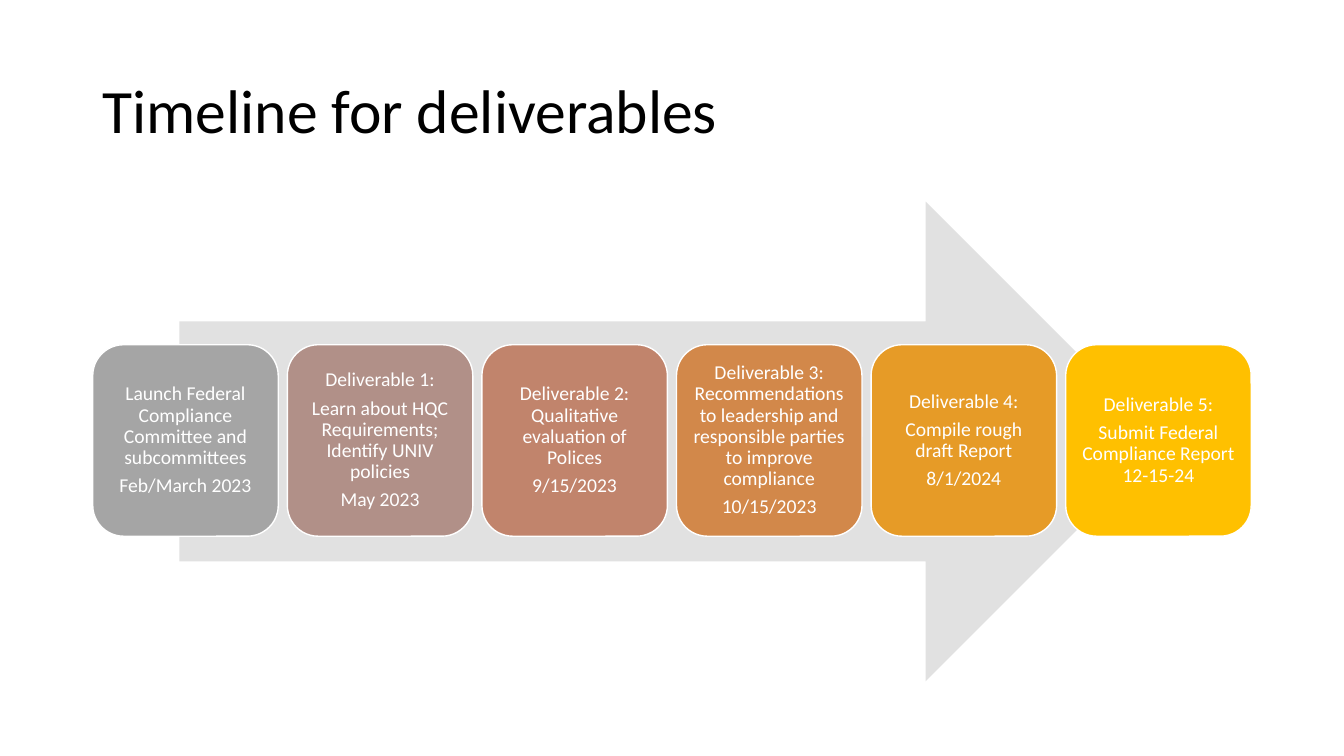
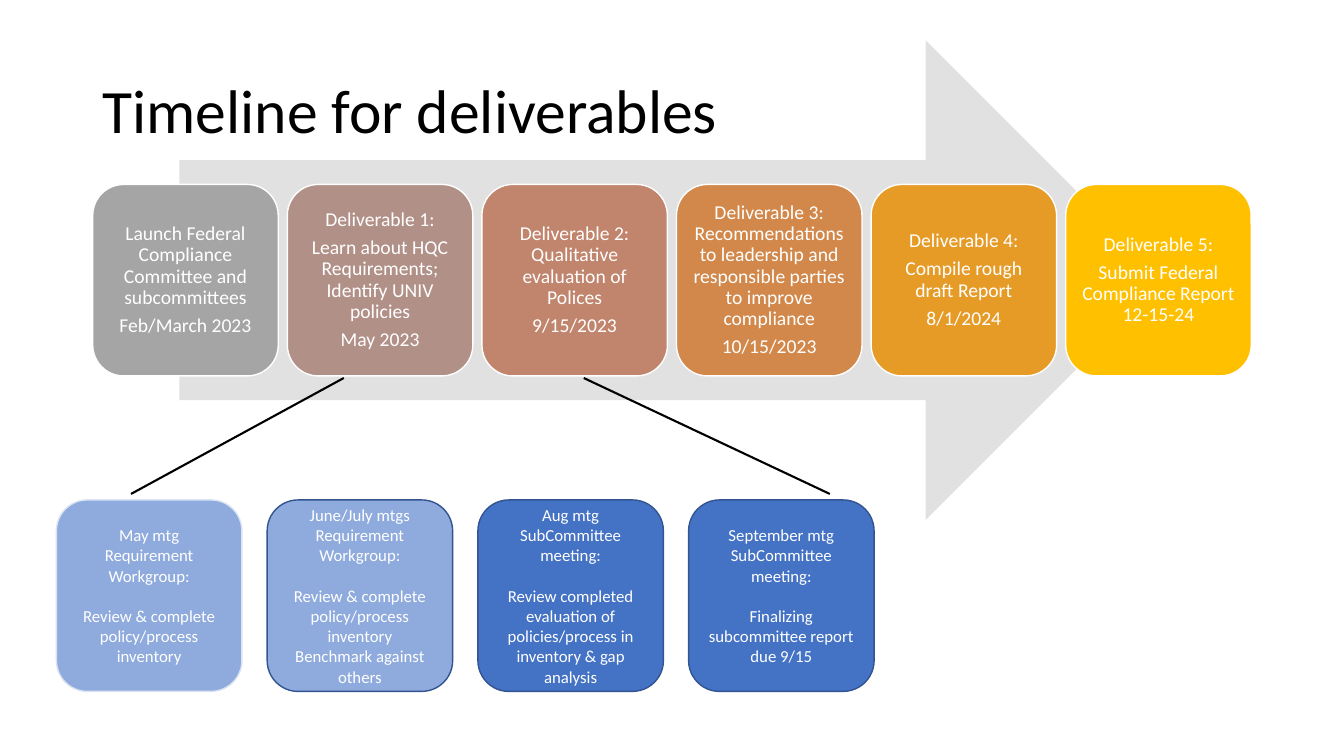
from lxml import etree
from pptx import Presentation
from pptx import util as u
from pptx.dml.color import RGBColor
from pptx.enum import shapes, text
from pptx.oxml.ns import qn

FONT = "Calibri"
BLACK = RGBColor(0x00, 0x00, 0x00)
WHITE = RGBColor(0xFF, 0xFF, 0xFF)
ARROW_GRAY = RGBColor(0xE1, 0xE1, 0xE1)
LIGHT_BLUE = RGBColor(0x8F, 0xAA, 0xDC)
PALE_BLUE = RGBColor(0xDA, 0xE3, 0xF3)
BLUE = RGBColor(0x44, 0x72, 0xC4)
DARK_BLUE = RGBColor(0x32, 0x54, 0x91)

BOX_WIDTH, BOX_HEIGHT = 1.84, 1.9
STEP_LEFT, STEP_PITCH = 0.92, 1.93
MEETING_LEFT, MEETING_TOP, MEETING_PITCH = 0.56, 4.96, 2.09

STEPS = [
    (RGBColor(0xA5, 0xA5, 0xA5),
     ["Launch Federal Compliance Committee and subcommittees", "Feb/March 2023"]),
    (RGBColor(0xB1, 0x90, 0x88),
     ["Deliverable 1:", "Learn about HQC Requirements; Identify UNIV policies", "May 2023"]),
    (RGBColor(0xC1, 0x84, 0x6C),
     ["Deliverable 2: Qualitative evaluation of Polices", "9/15/2023"]),
    (RGBColor(0xD2, 0x88, 0x4A),
     ["Deliverable 3: Recommendations to leadership and responsible parties "
      "to improve compliance", "10/15/2023"]),
    (RGBColor(0xE6, 0x9B, 0x27),
     ["Deliverable 4:", "Compile rough draft Report", "8/1/2024"]),
    (RGBColor(0xFF, 0xC0, 0x00),
     ["Deliverable 5:", "Submit Federal Compliance Report 12-15-24"]),
]

MEETINGS = [
    (LIGHT_BLUE, PALE_BLUE, ["May mtg", "Requirement Workgroup:"],
     ["Review & complete policy/process inventory"]),
    (LIGHT_BLUE, DARK_BLUE, ["June/July mtgs", "Requirement Workgroup:"],
     ["Review & complete policy/process inventory", "Benchmark against others"]),
    (BLUE, DARK_BLUE, ["Aug mtg", "SubCommittee meeting:"],
     ["Review completed evaluation of policies/process in inventory & gap analysis"]),
    (BLUE, DARK_BLUE, ["September mtg", "SubCommittee", "meeting:"],
     ["Finalizing subcommittee report due 9/15"]),
]

LINKS = [((3.41, 3.75), (1.3, 4.9)), ((8.23, 4.9), (5.79, 3.75))]


def write_text(shape, lines, size, color, alignment, spacing=1.0):
    frame = shape.text_frame
    frame.word_wrap = True
    frame.vertical_anchor = text.MSO_ANCHOR.MIDDLE
    frame.text = "\n".join(lines)
    for paragraph in frame.paragraphs:
        paragraph.alignment = alignment
        paragraph.line_spacing = spacing
        for run in paragraph.runs:
            run.font.name = FONT
            run.font.size = u.Pt(size)
            run.font.color.rgb = color
    return frame


def add_box(slide, left, top, fill, outline):
    shape = slide.shapes.add_shape(
        shapes.MSO_SHAPE.ROUNDED_RECTANGLE,
        u.Inches(left), u.Inches(top), u.Inches(BOX_WIDTH), u.Inches(BOX_HEIGHT))
    shape.shadow.inherit = False
    shape.fill.solid()
    shape.fill.fore_color.rgb = fill
    shape.line.color.rgb = outline
    shape.line.width = u.Pt(1)
    return shape


presentation = Presentation()
presentation.slide_width = u.Inches(13.33)
presentation.slide_height = u.Inches(7.5)

for arrow_top, steps_top in [(2.0, 3.42), (0.4, 1.83)]:
    slide = presentation.slides.add_slide(presentation.slide_layouts[6])

    title = slide.shapes.add_textbox(
        u.Inches(0.92), u.Inches(0.4), u.Inches(11.5), u.Inches(1.45))
    write_text(title, ["Timeline for deliverables"], 44, BLACK, text.PP_ALIGN.LEFT, 0.9)

    arrow = slide.shapes.add_shape(
        shapes.MSO_SHAPE.RIGHT_ARROW,
        u.Inches(1.78), u.Inches(arrow_top), u.Inches(9.78), u.Inches(4.76))
    arrow.shadow.inherit = False
    arrow.fill.solid()
    arrow.fill.fore_color.rgb = ARROW_GRAY
    arrow.line.fill.background()

    for index, (fill, lines) in enumerate(STEPS):
        step = add_box(slide, STEP_LEFT + index * STEP_PITCH, steps_top, fill, WHITE)
        frame = write_text(step, lines, 14, WHITE, text.PP_ALIGN.CENTER, 0.9)
        frame.margin_left = frame.margin_right = u.Inches(0.06)
        frame.margin_top = frame.margin_bottom = u.Inches(0.06)
        for paragraph in frame.paragraphs:
            paragraph.space_after = u.Pt(4.9)

for start, end in LINKS:
    link = slide.shapes.add_connector(
        shapes.MSO_CONNECTOR.STRAIGHT, *[u.Inches(value) for value in start + end])
    link.line.color.rgb = BLACK
    link.line.width = u.Pt(1.5)
    etree.SubElement(link._element.spPr, qn("a:effectLst"))

for index, (fill, outline, heading, tasks) in enumerate(MEETINGS):
    meeting = add_box(slide, MEETING_LEFT + index * MEETING_PITCH, MEETING_TOP, fill, outline)
    frame = write_text(meeting, heading + tasks, 12, WHITE, text.PP_ALIGN.CENTER)
    frame.paragraphs[len(heading)].space_before = u.Pt(14.6)

presentation.save("out.pptx")
